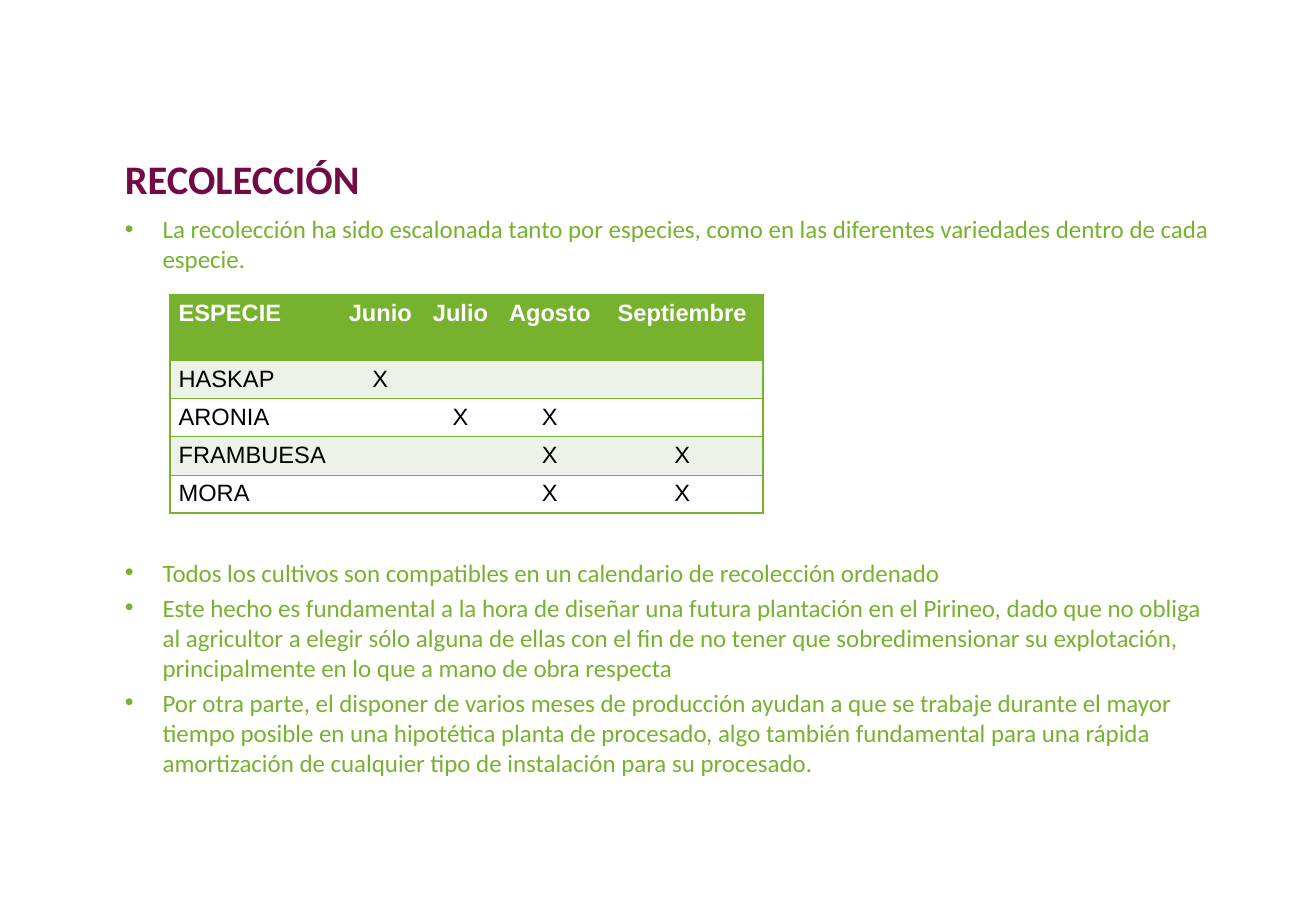
import dataclasses

import lxml.etree
import pptx
import pptx.dml.color
import pptx.enum.text
import pptx.oxml.ns
import pptx.util

Inches = pptx.util.Inches
Align = pptx.enum.text.PP_ALIGN
Anchor = pptx.enum.text.MSO_ANCHOR


@dataclasses.dataclass(frozen=True)
class Theme:
    green: str = "77B22F"
    plum: str = "720B45"
    band: str = "ECF2E8"
    white: str = "FFFFFF"
    black: str = "000000"
    text_font: str = "Calibri"
    table_font: str = "Arial"
    title_size: float = 24
    body_size: float = 14.8
    table_size: float = 14
    outer_line: float = 1
    inner_line: float = 0.5


@dataclasses.dataclass(frozen=True)
class TextBlock:
    top: float
    height: float
    paragraphs: tuple[str, ...]
    width: float = 9.21
    size: float = Theme.body_size
    color: str = Theme.green
    bold: bool = False
    bulleted: bool = True
    anchor: Anchor = Anchor.TOP


@dataclasses.dataclass(frozen=True)
class Species:
    name: str
    harvest_months: tuple[str, ...]


THEME = Theme()
TEXT_LEFT = 0.93
BULLET_INDENT = 0.31
TABLE_LEFT, TABLE_TOP = 1.4, 2.43
COLUMN_WIDTHS = (1.38, 0.7, 0.62, 0.85, 1.33)
HEADER_HEIGHT, ROW_HEIGHT = 0.54, 0.31
MONTHS = ("Junio", "Julio", "Agosto", "Septiembre")

SPECIES = (
    Species("HASKAP", ("Junio",)),
    Species("ARONIA", ("Julio", "Agosto")),
    Species("FRAMBUESA", ("Agosto", "Septiembre")),
    Species("MORA", ("Agosto", "Septiembre")),
)

TEXT_BLOCKS = (
    TextBlock(1.15, 0.63, ("RECOLECCIÓN",), width=9.29, size=THEME.title_size,
              color=THEME.plum, bold=True, bulleted=False, anchor=Anchor.MIDDLE),
    TextBlock(1.71, 0.65, (
        "La recolección ha sido escalonada tanto por especies, como en las diferentes "
        "variedades dentro de cada especie.",
    )),
    TextBlock(4.54, 1.96, (
        "Todos los cultivos son compatibles en un calendario de recolección ordenado",
        "Este hecho es fundamental a la hora de diseñar una futura plantación en el Pirineo, "
        "dado que no obliga al agricultor a elegir sólo alguna de ellas con el fin de no tener "
        "que sobredimensionar su explotación, principalmente en lo que a mano de obra respecta",
        "Por otra parte, el disponer de varios meses de producción ayudan a que se trabaje "
        "durante el mayor tiempo posible en una hipotética planta de procesado, algo también "
        "fundamental para una rápida amortización de cualquier tipo de instalación para su "
        "procesado.",
    )),
)


def rgb(color: str) -> pptx.dml.color.RGBColor:
    return pptx.dml.color.RGBColor.from_string(color)


def add_child(parent, tag: str, **attributes: str):
    child = lxml.etree.SubElement(parent, pptx.oxml.ns.qn(tag))
    for name, value in attributes.items():
        child.set(name, value)
    return child


def write_text(paragraph, text: str, *, font: str, size: float, color: str,
               bold: bool = False, align: Align = Align.LEFT) -> None:
    paragraph.alignment = align
    if not text:
        paragraph.font.size = pptx.util.Pt(size)
        add_child(paragraph._p, "a:endParaRPr", sz=str(round(size * 100)))
        return
    run = paragraph.add_run()
    run.text = text
    run.font.name = font
    run.font.size = pptx.util.Pt(size)
    run.font.bold = bold
    run.font.color.rgb = rgb(color)


def add_bullet(paragraph) -> None:
    properties = paragraph._p.get_or_add_pPr()
    properties.set("marL", str(Inches(BULLET_INDENT)))
    properties.set("indent", str(-Inches(BULLET_INDENT)))
    add_child(properties, "a:buFont", typeface=THEME.table_font)
    add_child(properties, "a:buChar", char="•")


def add_text_block(slide, block: TextBlock) -> None:
    shape = slide.shapes.add_textbox(Inches(TEXT_LEFT), Inches(block.top),
                                     Inches(block.width), Inches(block.height))
    frame = shape.text_frame
    frame.word_wrap = True
    frame.vertical_anchor = block.anchor
    for index, text in enumerate(block.paragraphs):
        paragraph = frame.paragraphs[0] if index == 0 else frame.add_paragraph()
        if block.bulleted:
            add_bullet(paragraph)
        if index > 0:
            paragraph.space_before = pptx.util.Pt(3)
        write_text(paragraph, text, font=THEME.text_font, size=block.size,
                   color=block.color, bold=block.bold)


def set_border(cell, side: str, width: float) -> None:
    """Draw one cell edge in green, or hide it when the width is zero."""
    line = add_child(cell._tc.get_or_add_tcPr(), f"a:ln{side}", w=str(pptx.util.Pt(width)))
    if width:
        add_child(add_child(line, "a:solidFill"), "a:srgbClr", val=THEME.green)
    else:
        add_child(line, "a:noFill")


def format_cell(cell, row: int, column: int, text: str) -> None:
    is_header = row == 0
    outer, inner = THEME.outer_line, THEME.inner_line
    set_border(cell, "L", outer if column == 0 else 0)
    set_border(cell, "R", outer if column == len(MONTHS) else 0)
    set_border(cell, "T", outer if is_header else inner)
    set_border(cell, "B", outer if row == len(SPECIES) else inner)
    cell.fill.solid()
    banding = THEME.band if row % 2 else THEME.white
    cell.fill.fore_color.rgb = rgb(THEME.green if is_header else banding)
    cell.margin_left = cell.margin_right = Inches(0.07)
    cell.margin_top = cell.margin_bottom = Inches(0.04)
    write_text(cell.text_frame.paragraphs[0], text, font=THEME.table_font,
               size=THEME.table_size, color=THEME.white if is_header else THEME.black,
               bold=is_header, align=Align.CENTER if column else Align.LEFT)


def add_harvest_table(slide) -> None:
    rows = [("ESPECIE", *MONTHS)]
    for species in SPECIES:
        marks = ("X" if month in species.harvest_months else "" for month in MONTHS)
        rows.append((species.name, *marks))
    heights = (HEADER_HEIGHT, *[ROW_HEIGHT] * len(SPECIES))
    table = slide.shapes.add_table(
        len(rows), len(COLUMN_WIDTHS), Inches(TABLE_LEFT), Inches(TABLE_TOP),
        Inches(sum(COLUMN_WIDTHS)), Inches(sum(heights))).table
    table.first_row = table.horz_banding = False
    for column, width in zip(table.columns, COLUMN_WIDTHS):
        column.width = Inches(width)
    for row_index, texts in enumerate(rows):
        table.rows[row_index].height = Inches(heights[row_index])
        for column_index, text in enumerate(texts):
            format_cell(table.cell(row_index, column_index), row_index, column_index, text)


def main() -> None:
    presentation = pptx.Presentation()
    presentation.slide_width = Inches(10.83)
    presentation.slide_height = Inches(7.5)
    slide = presentation.slides.add_slide(presentation.slide_layouts[6])
    for block in TEXT_BLOCKS:
        add_text_block(slide, block)
    add_harvest_table(slide)
    presentation.save("out.pptx")


if __name__ == "__main__":
    main()
